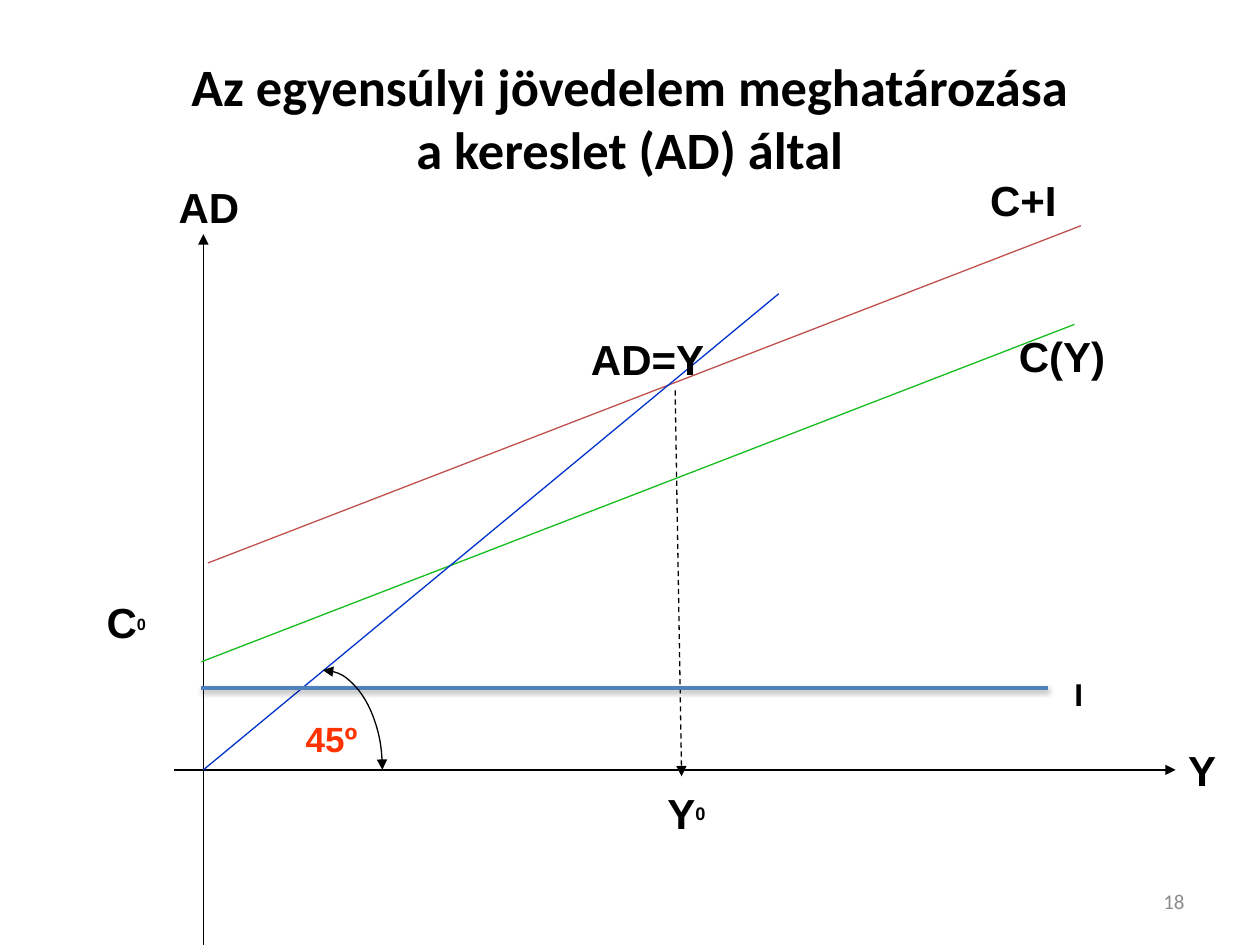
from dataclasses import dataclass

from lxml import etree
from pptx import Presentation
from pptx import util as u
from pptx.dml.color import RGBColor
from pptx.enum import dml, shapes, text
from pptx.oxml import ns


@dataclass(frozen=True)
class Theme:
    heading_font: str = "Calibri"
    label_font: str = "Arial"
    ink: str = "000000"
    muted: str = "8C8C8C"
    demand: str = "C0504D"
    consumption: str = "15BD1D"
    investment: str = "4F81BD"
    diagonal: str = "0033CC"
    angle: str = "FF3300"
    title_size: int = 30
    label_size: int = 24
    angle_size: int = 20
    small_size: int = 18
    index_size: int = 16
    number_size: int = 12
    thin: float = 0.75
    thick: float = 2


THEME = Theme()
LEFT, CENTER, RIGHT = text.PP_ALIGN.LEFT, text.PP_ALIGN.CENTER, text.PP_ALIGN.RIGHT


def child(parent, tag, **attributes):
    return etree.SubElement(parent, ns.qn(tag), {k: str(v) for k, v in attributes.items()})


def add_run(paragraph, words, *, size, font=THEME.label_font, color=THEME.ink,
            bold=True, baseline=0):
    run = paragraph.add_run()
    run.text = words
    run.font.name, run.font.size, run.font.bold = font, u.Pt(size), bold
    run.font.color.rgb = RGBColor.from_string(color)
    if baseline:
        run.font._element.set("baseline", str(baseline * 1000))


def add_label(slide, box, words, *, size=THEME.label_size, align=LEFT, index="",
              index_size=THEME.index_size, anchor=text.MSO_ANCHOR.TOP, **style):
    """Text box at box (cm), with an optional raised index after the words."""
    frame = slide.shapes.add_textbox(*map(u.Cm, box)).text_frame
    frame.word_wrap = True
    frame.vertical_anchor = anchor
    paragraph = frame.paragraphs[0]
    paragraph.alignment = align
    add_run(paragraph, words, size=size, **style)
    if index:
        add_run(paragraph, index, size=index_size, baseline=30, **style)


def style_line(shape, color, width=THEME.thin, dash=None, arrows=()):
    shape.line.color.rgb = RGBColor.from_string(color)
    shape.line.width = u.Pt(width)
    if dash:
        shape.line.dash_style = dash
    outline = shape.line._get_or_add_ln()
    for end in arrows:
        child(outline, f"a:{end}End", type="triangle")


def add_line(slide, start, end, color, shadow=False, **style):
    line = slide.shapes.add_connector(
        shapes.MSO_CONNECTOR.STRAIGHT, *map(u.Cm, (*start, *end)))
    style_line(line, color, **style)
    effects = child(line._element.spPr, "a:effectLst")
    if shadow:
        outer = child(effects, "a:outerShdw", blurRad=u.Pt(3.1), dist=u.Pt(1.6),
                      dir=90 * 60000, rotWithShape=0)
        child(child(outer, "a:srgbClr", val=THEME.ink), "a:alpha", val=38000)


def place_title(slide, box):
    title = slide.shapes.title
    title.left, title.top, title.width, title.height = map(u.Cm, box)
    frame = title.text_frame
    frame.vertical_anchor = text.MSO_ANCHOR.MIDDLE
    paragraph = frame.paragraphs[0]
    paragraph.alignment = CENTER
    style = {"size": THEME.title_size, "font": THEME.heading_font}
    add_run(paragraph, "Az egyensúlyi jövedelem meghatározása", **style)
    paragraph.add_line_break()
    add_run(paragraph, "a kereslet (AD) által", **style)


def place_keynesian_cross(slide, box):
    left, top, width, height = box

    def at(x, y):
        return left + x, top + y

    origin_x, origin_y = 2.2, 12.12
    origin = at(origin_x, origin_y)

    # Axes
    add_line(slide, at(origin_x, height), at(origin_x, 1.32), THEME.ink, arrows=["tail"])
    add_line(slide, at(1.61, origin_y), at(21.8, origin_y), THEME.ink, arrows=["tail"])

    # Total demand and, parallel below it, consumption
    for x, y, color in ((2.29, 7.95, THEME.demand), (2.16, 9.94, THEME.consumption)):
        add_line(slide, at(x, y), at(x + 17.6, y - 6.8), color)

    # 45-degree line, drop to equilibrium income, investment
    add_line(slide, origin, at(13.8, 2.52), THEME.diagonal)
    add_line(slide, at(11.71, 4.47), at(11.84, 12.25), THEME.ink,
             dash=dml.MSO_LINE.DASH, arrows=["tail"])
    add_line(slide, at(2.16, 10.47), at(19.23, 10.47), THEME.investment,
             width=THEME.thick, shadow=True)

    # Angle mark: a quarter ellipse that ends on the income axis
    radius_x, radius_y = 1.2, 2.01
    arc = slide.shapes.add_shape(
        shapes.MSO_SHAPE.ARC,
        *map(u.Cm, (*at(3.41, origin_y - radius_y), 2 * radius_x, 2 * radius_y)))
    arc.shadow.inherit = False
    arc.fill.background()
    style_line(arc, THEME.ink, arrows=["head", "tail"])

    # Labels: words, x, y, width, format
    labels = (
        ("AD", 1.45, 0.13, 2.34, {}),
        ("Y", 21.8, 11.48, 1.6, {}),
        ("C+I", 17.81, 0, 3.5, {}),
        ("C(Y)", 18.39, 3.13, 2.39, {}),
        ("C", 0, 8.51, 1.6, {"index": "0"}),
        ("AD=Y", 9.25, 3.2, 3.81, {"align": CENTER}),
        ("Y", 10.85, 12.35, 2.18,
         {"align": CENTER, "index": "0", "index_size": THEME.small_size}),
        ("45º", 3.59, 10.93, 2.39,
         {"align": CENTER, "size": THEME.angle_size, "color": THEME.angle}),
        ("I", 19.51, 10.09, 1.55, {"size": THEME.small_size}),
    )
    for words, x, y, label_width, style in labels:
        add_label(slide, (*at(x, y), label_width, 1.27), words, **style)


def place_slide_number(slide, box):
    add_label(slide, box, "18", size=THEME.number_size, align=RIGHT, bold=False,
              font=THEME.heading_font, color=THEME.muted, anchor=text.MSO_ANCHOR.MIDDLE)


def main():
    deck = Presentation()
    deck.slide_width, deck.slide_height = u.Cm(25.4), u.Cm(19.05)
    slide = deck.slides.add_slide(deck.slide_layouts.get_by_name("Title Only"))
    place_slide_number(slide, (18.21, 17.65, 5.92, 1.02))
    place_title(slide, (1.27, 0.76, 22.86, 3.18))
    place_keynesian_cross(slide, (1.9, 3.4, 23.4, 15.65))
    deck.save("out.pptx")


if __name__ == "__main__":
    main()
